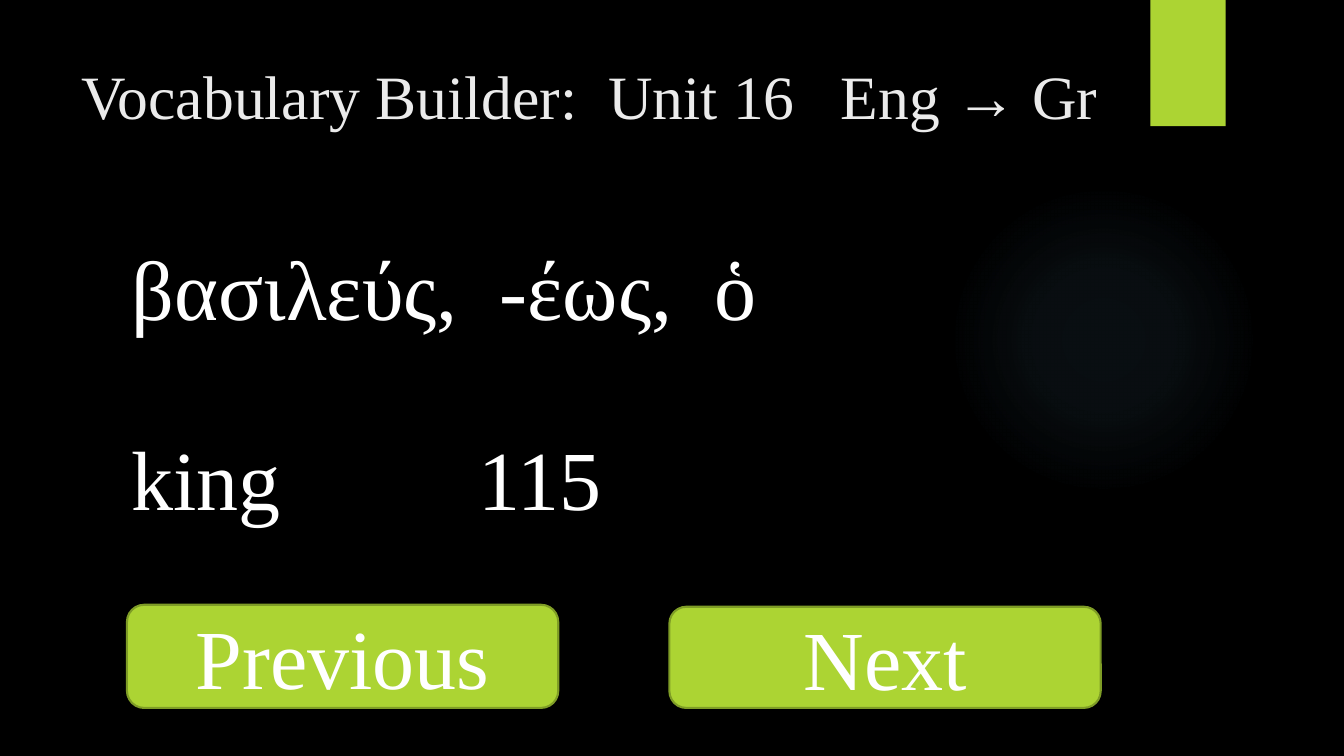
"""Build the Unit 16 vocabulary slide for the Greek word for king."""
from lxml import etree
from pptx import Presentation
from pptx.dml.color import RGBColor
from pptx.enum.shapes import MSO_SHAPE
from pptx.enum.text import MSO_ANCHOR, PP_ALIGN
from pptx.oxml import parse_xml
from pptx.oxml.ns import qn
from pptx.util import Cm, Pt

NS = 'xmlns:a="http://schemas.openxmlformats.org/drawingml/2006/main"'
LIME = "ACD433"


def color(value):
    return RGBColor.from_string(value)


def write(frame, words, size=60, ink="FFFFFF"):
    run = frame.paragraphs[0].add_run()
    run.text = words
    run.font.name = "Times New Roman"
    run.font.size = Pt(size)
    run.font.color.rgb = color(ink)


prs = Presentation()
prs.slide_width, prs.slide_height = Cm(33.87), Cm(19.05)
slide = prs.slides.add_slide(prs.slide_layouts[6])
slide.background.fill.solid()
slide.background.fill.fore_color.rgb = color("000000")

glow = slide.shapes.add_shape(MSO_SHAPE.OVAL, Cm(23.9), Cm(4.65), Cm(7.82), Cm(7.82))
glow.shadow.inherit = False
glow.line.fill.background()
stops = "".join(
    f'<a:gs pos="{place * 1000}"><a:srgbClr val="7AC4F0">'
    f'<a:alpha val="{alpha * 1000}"/></a:srgbClr></a:gs>'
    for place, alpha in ((0, 7), (36, 6), (69, 0))
)
glow._element.spPr.find(qn("a:prstGeom")).addnext(parse_xml(
    f'<a:gradFill {NS} rotWithShape="1"><a:gsLst>{stops}</a:gsLst><a:path path="circle">'
    '<a:fillToRect l="50000" t="50000" r="50000" b="50000"/></a:path></a:gradFill>'
))

ribbon = slide.shapes.add_shape(MSO_SHAPE.RECTANGLE, Cm(28.99), 0, Cm(1.9), Cm(3.18))
ribbon.shadow.inherit = False
ribbon.fill.solid()
ribbon.fill.fore_color.rgb = color(LIME)
ribbon.line.fill.background()
shade = etree.SubElement(
    ribbon._element.spPr.find(qn("a:effectLst")), qn("a:outerShdw"),
    blurRad=str(Pt(3)), dist=str(Pt(2)), dir="5400000", rotWithShape="0",
)
shade_color = etree.SubElement(shade, qn("a:srgbClr"), val="000000")
etree.SubElement(shade_color, qn("a:alpha"), val="45000")

for left, top, width, height, inset, wrap, words, size, ink in (
    (3.07, 5.72, 24.84, 3.94, 0.25, True, "βασιλεύς,  -έως,  ὁ", 60, "FFFFFF"),
    (3.07, 10.49, 12.62, 2.82, 0.25, False, "king\t115", 60, "FFFFFF"),
    (1.8, 1.27, 27.51, 2.44, 0.18, True, "Vocabulary Builder:  Unit 16   Eng → Gr", 44, "EBEBEB"),
):
    entry = slide.shapes.add_textbox(Cm(left), Cm(top), Cm(width), Cm(height)).text_frame
    entry.word_wrap = wrap
    entry.margin_top = Cm(inset)
    if "\t" in words:
        tabs = etree.SubElement(entry.paragraphs[0]._p.get_or_add_pPr(), qn("a:tabLst"))
        etree.SubElement(tabs, qn("a:tab"), pos=str(Cm(8.75)), algn="l")
    write(entry, words, size, ink)

for words, left, top, height in (("Previous", 3.2, 15.24, 2.6), ("Next", 16.87, 15.29, 2.55)):
    button = slide.shapes.add_shape(
        MSO_SHAPE.ROUNDED_RECTANGLE, Cm(left), Cm(top), Cm(10.87), Cm(height))
    button.shadow.inherit = False
    button.fill.solid()
    button.fill.fore_color.rgb = color(LIME)
    button.line.color.rgb = color("7F9D26")
    button.line.width = Pt(1.5)
    button.text_frame.vertical_anchor = MSO_ANCHOR.MIDDLE
    button.text_frame.paragraphs[0].alignment = PP_ALIGN.CENTER
    write(button.text_frame, words)

prs.save("out.pptx")
